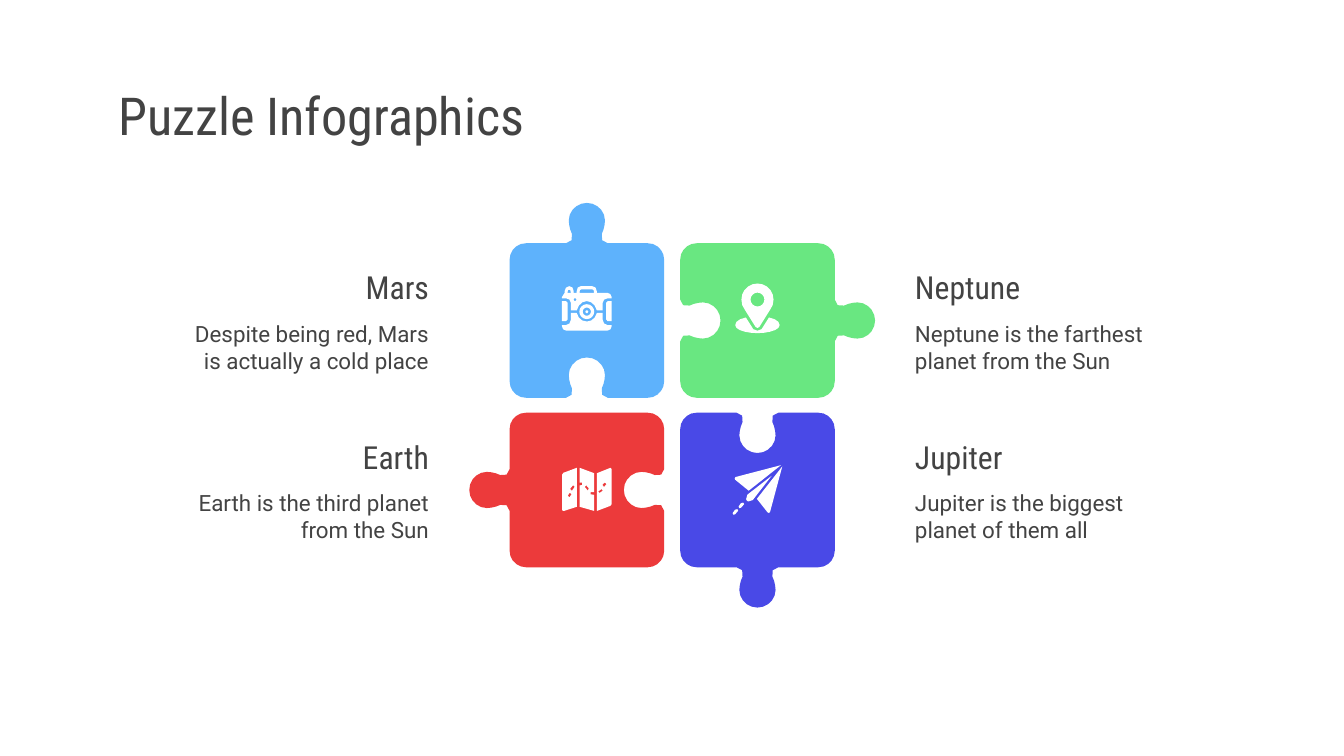
import math

import pptx
import pptx.dml.color
import pptx.enum.text
import pptx.util

deck = pptx.Presentation()
deck.slide_width = pptx.util.Pt(720)
deck.slide_height = pptx.util.Pt(405)
page = deck.slides.add_slide(deck.slide_layouts[6])
color = pptx.dml.color.RGBColor.from_string
INK, WHITE = "434343", "FFFFFF"


def trace(outline):
    """Points of an outline: pairs are corners, sixes are cubic curves, a four is an ellipse."""
    points = []
    for step in outline:
        if len(step) == 4:
            x, y, rx, ry = step
            count = 16 if rx > 2 else 6
            angles = [math.tau * i / count for i in range(count)]
            points += [(x + rx * math.cos(a), y + ry * math.sin(a)) for a in angles]
        elif len(step) == 2:
            points.append(step)
        else:
            knots = [points[-1], step[:2], step[2:4], step[4:]]
            count = min(5, max(2, round(math.dist(knots[0], knots[3]) / 2.5)))
            for t in [i / count for i in range(1, count + 1)]:
                weights = [math.comb(3, k) * t**k * (1 - t) ** (3 - k) for k in range(4)]
                points.append(tuple(sum(w * knot[axis] for w, knot in zip(weights, knots))
                                    for axis in (0, 1)))
    return points


def draw(contours, center, fill):
    """One filled freeform; the contours after the first cut holes."""
    builder = None
    for points in contours:
        placed = [(round(100 * (center[0] + x)), round(100 * (center[1] + y))) for x, y in points]
        if builder is None:
            builder = page.shapes.build_freeform(*placed[0], scale=pptx.util.Pt(1) / 100)
        else:
            builder.move_to(*placed[0])
        builder.add_line_segments(placed[1:], close=True)
    shape = builder.convert_to_shape()
    shape.shadow.inherit = False
    shape.fill.solid()
    shape.fill.fore_color.rgb = color(fill)
    shape.line.fill.background()


# Puzzle outline: the socket is the knob moved down by one side
SIDE = 82.8
HALF = SIDE / 2
knob = trace([(0, -63), (5.2, -63, 9.7, -58.8, 9.7, -53.6), (9.7, -51.2, 9, -48.6, 8, -46.4),
              (6.8, -44, 8.6, -HALF, 11.2, -HALF)])
edge = trace([(32.6, -HALF), (37.5, -HALF, HALF, -37.4, HALF, -32.6),
              (HALF, 32.6), (HALF, 37.4, 37.5, HALF, 32.6, HALF)])
right_half = knob + edge + [(x, y + SIDE) for x, y in reversed(knob)]
puzzle = right_half + [(-x, y) for x, y in reversed(right_half[1:-1])]

# Icons: parts made of outlines, measured from the centre of the piece
camera = [
    [[(-9.4, -18.4), (-10.8, -18.4, -11.9, -17, -11.9, -15.6), (-11.9, -14.8),
      (-13.3, -12.6), (-13.3, -11.9), (-11.2, -11.9),
      (-9.7, -11.9, -8.5, -10.8, -8.5, -9.4), (-8.5, -5.4), (-5.4, -5.4),
      (-4.7, -8.3, -2.5, -10.4, 0, -10.4), (2.5, -10.4, 4.7, -8.3, 5.4, -5.4), (8.5, -5.4),
      (8.5, -9.4), (8.5, -10.8, 9.7, -11.9, 11.2, -11.9), (13.3, -11.9), (13.3, -12.6),
      (13.3, -13.7, 12.2, -14.8, 11.2, -14.8), (5.4, -14.8), (5.4, -15.6),
      (5.4, -17.3, 4.3, -18.4, 2.9, -18.4), (-3.2, -18.4),
      (-4.7, -18.4, -5.4, -17.3, -5.4, -15.6), (-5.4, -14.8), (-7, -14.8), (-7, -15.6),
      (-7, -17.3, -8, -18.4, -9.4, -18.4)],
     [(-10.4, -14.8), (-10, -16.4), (-8.9, -16.4), (-8.5, -14.8)],
     [(-3.9, -14.8), (-3.7, -16.2), (-2.9, -16.7), (2.9, -16.7), (3.7, -16.2), (3.9, -14.8)],
     [(-6.3, -11.2, 0.8, 0.8)]],
    [[(-8.5, -4), (-8.5, -0.4), (-8.5, 1.2, -9.7, 2.5, -11.2, 2.5), (-13.3, 2.5), (-13.3, 3.2),
      (-13.3, 4.4, -12.3, 5.4, -11.2, 5.4), (11.2, 5.4), (12.3, 5.4, 13.3, 4.4, 13.3, 3.2),
      (13.3, 2.5), (11.2, 2.5), (9.7, 2.5, 8.5, 1.2, 8.5, -0.4), (8.5, -4), (5.4, -4),
      (4.7, -1.2, 2.6, 0.6, 0, 0.6), (-2.6, 0.6, -4.7, -1.2, -5.4, -4)]],
    [[(0, -4.7, 4, 4)], [(0, -4.7, 2.2, 2.2)]],
    [[(0, -4.7, 0.8, 0.8)]],
]
for side in (-1, 1):
    camera.append([[(side * 13.3, -10.4), (side * 11.2, -10.4), (side * 10.3, -9.5),
                    (side * 10.3, -0.5), (side * 11.2, 0.4), (side * 13.3, 0.4)]])

pin = [
    [[(0, -19.8), (-4.7, -19.8, -8.6, -16, -8.6, -11.2), (-8.6, -9, -8, -7.3, -6.8, -5.8),
      (-1, 3.5), (0, 4), (1, 3.5), (6.8, -5.8), (8, -7.3, 8.6, -9, 8.6, -11.2),
      (8.6, -16, 4.7, -19.8, 0, -19.8)],
     [(0, -11.2, 3.7, 3.7)]],
    [[(-6.2, -1.6), (-9.7, -0.9, -11.9, 0.6, -11.9, 2.5), (-11.9, 5.2, -6, 6.8, 0, 6.8),
      (6, 6.8, 11.9, 5.2, 11.9, 2.5), (11.9, 0.6, 9.7, -0.9, 6.2, -1.6), (2.2, 4.7),
      (1.2, 5.8, -1.2, 5.8, -2.2, 4.7)]],
]

plane = [
    [[(12.6, -13.3), (-11.8, -6.9), (-12.2, -6.2), (-12, -5.5), (-4.7, 0.4)]],
    [[(13.3, -12.6), (-0.3, 4.8), (5.4, 12), (6.2, 12.4), (6.8, 11.7)]],
    [[(7.6, -7.6), (-5.4, 2.5), (-6.1, 4.9), (-5.6, 6), (-4.7, 6.1), (-2.5, 5.4)]],
]
for x, y in [(-11.8, 11.9), (-8.6, 8.4)]:
    plane.append([[(x - 0.2, y - 1.3), (x + 1, y - 1.6), (x + 1.5, y - 0.8),
                   (x - 0.1, y + 1.1), (x - 1.1, y + 1.4), (x - 1.5, y + 0.5)]])

folded_map = [
    [[(-5.4, -11.9), (-12.6, -9.2), (-13.3, -8.2), (-13.3, 10.4), (-12.9, 11.2),
      (-12.2, 11.2), (-5.4, 9)],
     [(-7.4, -2.5), (-6.5, -1.7), (-8, 0.4), (-9, -0.6)],
     [(-9.2, 1.5), (-8.2, 2.2), (-9.3, 3.9), (-10.2, 3)]],
    [[(-3.9, -11.9), (-3.9, -4), (-2.5, -3.9), (-2.5, -2.6), (-3.9, -2.5), (-3.9, 9),
      (3.9, 11.2), (3.9, 2.6), (2, 2.3), (2, 1.2), (3.9, 1.1), (3.9, -9)],
     [(-0.4, -2.5), (1, -1), (0.6, 0.4), (-1.1, -1.6)]],
    [[(12.6, -11.9), (5.4, -9), (5.4, 11.2), (12.6, 8.5), (13.3, 7.5), (13.3, -11.2)],
     [(9.6, -4), (10.5, -3.2), (9.2, -1.6), (8.3, -2.8)],
     [(7.9, -0.5), (8.5, 0.4), (6.8, 1.6), (6, 0.8)]],
]

# Pieces run clockwise, each a quarter turn after the one before
pieces = [
    (0, 0, "5EB2FC", camera, "Mars", "Despite being red, Mars is actually a cold place"),
    (1, 0, "69E781", pin, "Neptune", "Neptune is the farthest planet from the Sun"),
    (1, 1, "4949E7", plane, "Jupiter", "Jupiter is the biggest planet of them all"),
    (0, 1, "EC3A3B", folded_map, "Earth", "Earth is the third planet from the Sun"),
]
HEADING = {"name": "Roboto Condensed", "size": pptx.util.Pt(17)}
BODY = {"name": "Roboto", "size": pptx.util.Pt(12)}
MIDDLE, TOP = pptx.enum.text.MSO_ANCHOR.MIDDLE, pptx.enum.text.MSO_ANCHOR.TOP
LEFT, RIGHT = pptx.enum.text.PP_ALIGN.LEFT, pptx.enum.text.PP_ALIGN.RIGHT
texts = [("Puzzle Infographics", (56.2, 42.5, 608.4, 38.2), MIDDLE, LEFT,
          {"name": "Roboto Condensed", "size": pptx.util.Pt(28)})]
for column, row, fill, icon, heading, body in pieces:
    center = (314.4 + 91.4 * column, 171.7 + 90.8 * row)
    draw([puzzle], center, fill)
    for part in icon:
        draw([trace(outline) for outline in part], center, WHITE)
    puzzle = [(-y, x) for x, y in puzzle]
    left, top = (88.6, 483.1)[column], 136.8 + 90.8 * row
    align = (RIGHT, LEFT)[column]
    texts.append((heading, (left, top, 148.3, 33.8), MIDDLE, align, HEADING))
    texts.append((body, (left, top + 27.4, 148.3, 41.8), TOP, align, BODY))

# Title and labels
for words, place, anchor, align, font_format in texts:
    box = page.shapes.add_textbox(*[pptx.util.Pt(length) for length in place])
    frame = box.text_frame
    frame.word_wrap = True
    frame.vertical_anchor = anchor
    for margin in ("left", "top", "right", "bottom"):
        setattr(frame, "margin_" + margin, pptx.util.Pt(7.2))
    para = frame.paragraphs[0]
    para.alignment = align
    span = para.add_run()
    span.text = words
    for key, value in font_format.items():
        setattr(span.font, key, value)
    span.font.color.rgb = color(INK)

deck.save("out.pptx")
